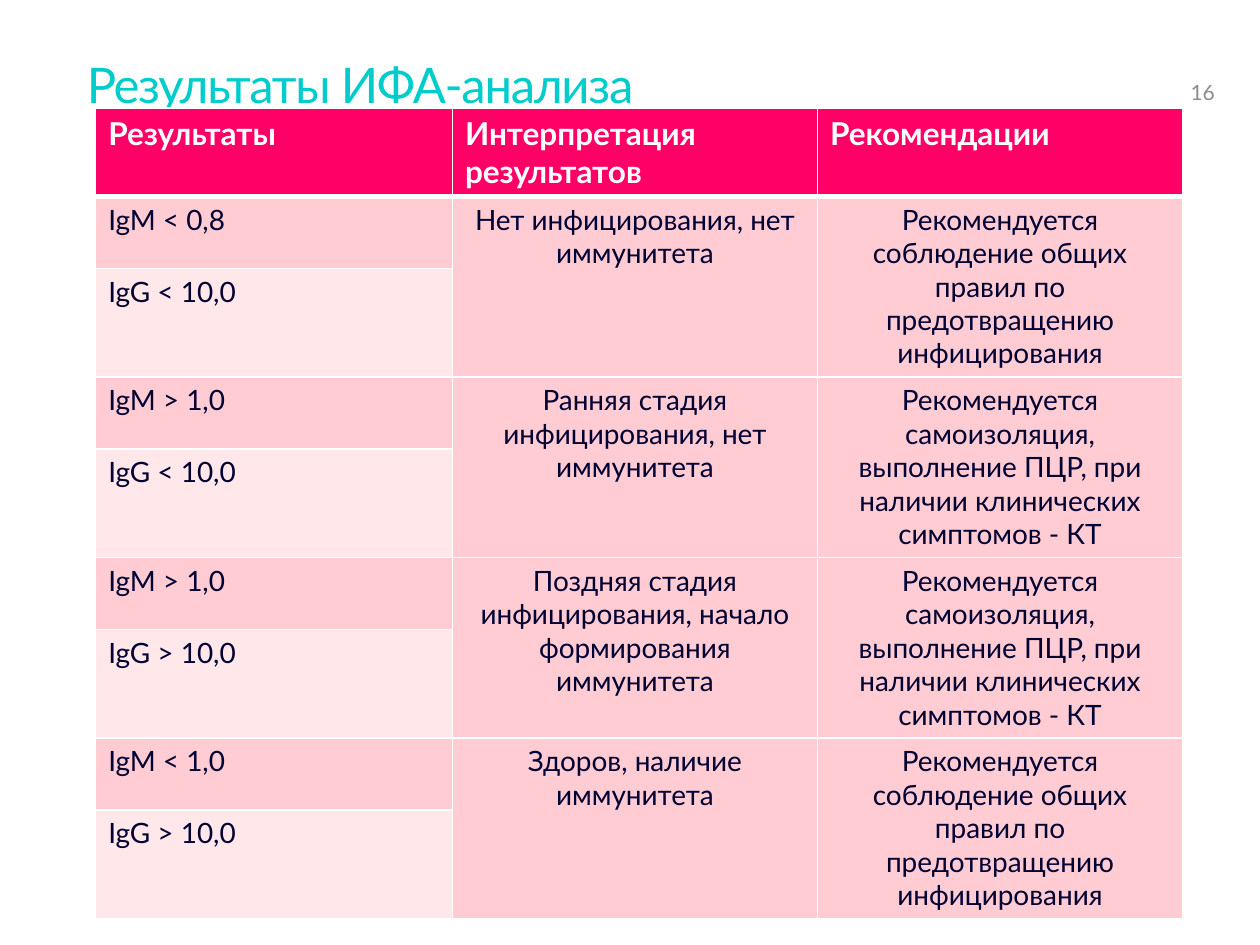
from lxml.etree import SubElement
from pptx import Presentation
from pptx.dml.color import RGBColor
from pptx.enum.text import MSO_ANCHOR, PP_ALIGN
from pptx.oxml.ns import qn
from pptx.util import Cm, Pt

FONT = "Lato"
WHITE, PINK, PALE, HEAD = "FFFFFF", "FFCCD3", "FFE7EA", "FF0066"
INK, TITLE, GREY = "000033", "00CCCC", "8C8C90"

HEADERS = ["Результаты", "Интерпретация результатов", "Рекомендации"]
GENERAL = "Рекомендуется соблюдение общих правил по предотвращению инфицирования"
ISOLATE = ("Рекомендуется самоизоляция, выполнение ПЦР, "
           "при наличии клинических симптомов - КТ")
# IgM, IgG, interpretation, recommendation
RESULTS = [
    ("IgM < 0,8", "IgG < 10,0", "Нет инфицирования, нет иммунитета", GENERAL),
    ("IgM > 1,0", "IgG < 10,0", "Ранняя стадия инфицирования, нет иммунитета", ISOLATE),
    ("IgM > 1,0", "IgG > 10,0",
     "Поздняя стадия инфицирования, начало формирования иммунитета", ISOLATE),
    ("IgM < 1,0", "IgG > 10,0", "Здоров, наличие иммунитета", GENERAL),
]
COL_WIDTHS = [7.19, 7.36, 7.36]
HEAD_HEIGHT, ROW_HEIGHT = 1.24, 1.45


def rgb(value):
    return RGBColor.from_string(value)


def write(tf, text, size=16, color=INK, bold=False, align=PP_ALIGN.LEFT,
          line=None, spacing=None):
    p = tf.paragraphs[0]
    p.alignment = align
    if line:
        p.line_spacing = Pt(line)
    r = p.add_run()
    r.text = text
    r.font.name, r.font.size, r.font.bold = FONT, Pt(size), bold
    r.font.color.rgb = rgb(color)
    if spacing:
        r.font._element.set("spc", str(round(spacing * 100)))


def text_box(s, box, text, inset, anchor=MSO_ANCHOR.TOP, **fmt):
    tf = s.shapes.add_textbox(*map(Cm, box)).text_frame
    tf.word_wrap = True
    tf.vertical_anchor = anchor
    tf.margin_left = tf.margin_right = 0
    tf.margin_top = tf.margin_bottom = Cm(inset)
    write(tf, text, **fmt)


def style_cell(cell, fill, top=1, bottom=1):
    # Borders come before the fill in the cell properties
    tc_pr = cell._tc.get_or_add_tcPr()
    for side, width in (("L", 1), ("R", 1), ("T", top), ("B", bottom)):
        ln = SubElement(tc_pr, qn(f"a:ln{side}"), w=str(Pt(width)))
        SubElement(SubElement(ln, qn("a:solidFill")), qn("a:srgbClr"), val=WHITE)
    cell.fill.solid()
    cell.fill.fore_color.rgb = rgb(fill)


prs = Presentation()
prs.slide_width, prs.slide_height = Cm(25.4), Cm(19.05)
s = prs.slides.add_slide(prs.slide_layouts[6])

# Title and page number
text_box(s, (1.75, 1.02, 21.9, 2.62), "Результаты ИФА-анализа", 0.13,
         size=28, color=TITLE, line=32, spacing=-0.7)
text_box(s, (24, 1.02, 0.97, 1.19), "16", 0.1, MSO_ANCHOR.BOTTOM,
         size=12, color=GREY)

# Table: a header, then two rows for each result
rows = 1 + 2 * len(RESULTS)
frame = s.shapes.add_table(rows, len(HEADERS), Cm(1.93), Cm(2.18),
                           Cm(sum(COL_WIDTHS)), Cm(14.99))
table = frame.table
for col, width in zip(table.columns, COL_WIDTHS):
    col.width = Cm(width)
for i, row in enumerate(table.rows):
    row.height = Cm(ROW_HEIGHT if i else HEAD_HEIGHT)
    for j, cell in enumerate(row.cells):
        if i == 0:
            style_cell(cell, HEAD, bottom=3)
        else:
            style_cell(cell, PALE if j == 0 and i % 2 == 0 else PINK,
                       top=3 if i == 1 else 1)

for j, text in enumerate(HEADERS):
    write(table.cell(0, j).text_frame, text, size=18, color=WHITE, bold=True)
for k, (igm, igg, *merged) in enumerate(RESULTS):
    i = 1 + 2 * k
    write(table.cell(i, 0).text_frame, igm)
    write(table.cell(i + 1, 0).text_frame, igg)
    for j, text in enumerate(merged, 1):
        table.cell(i, j).merge(table.cell(i + 1, j))
        write(table.cell(i, j).text_frame, text, align=PP_ALIGN.CENTER)

prs.save("out.pptx")
